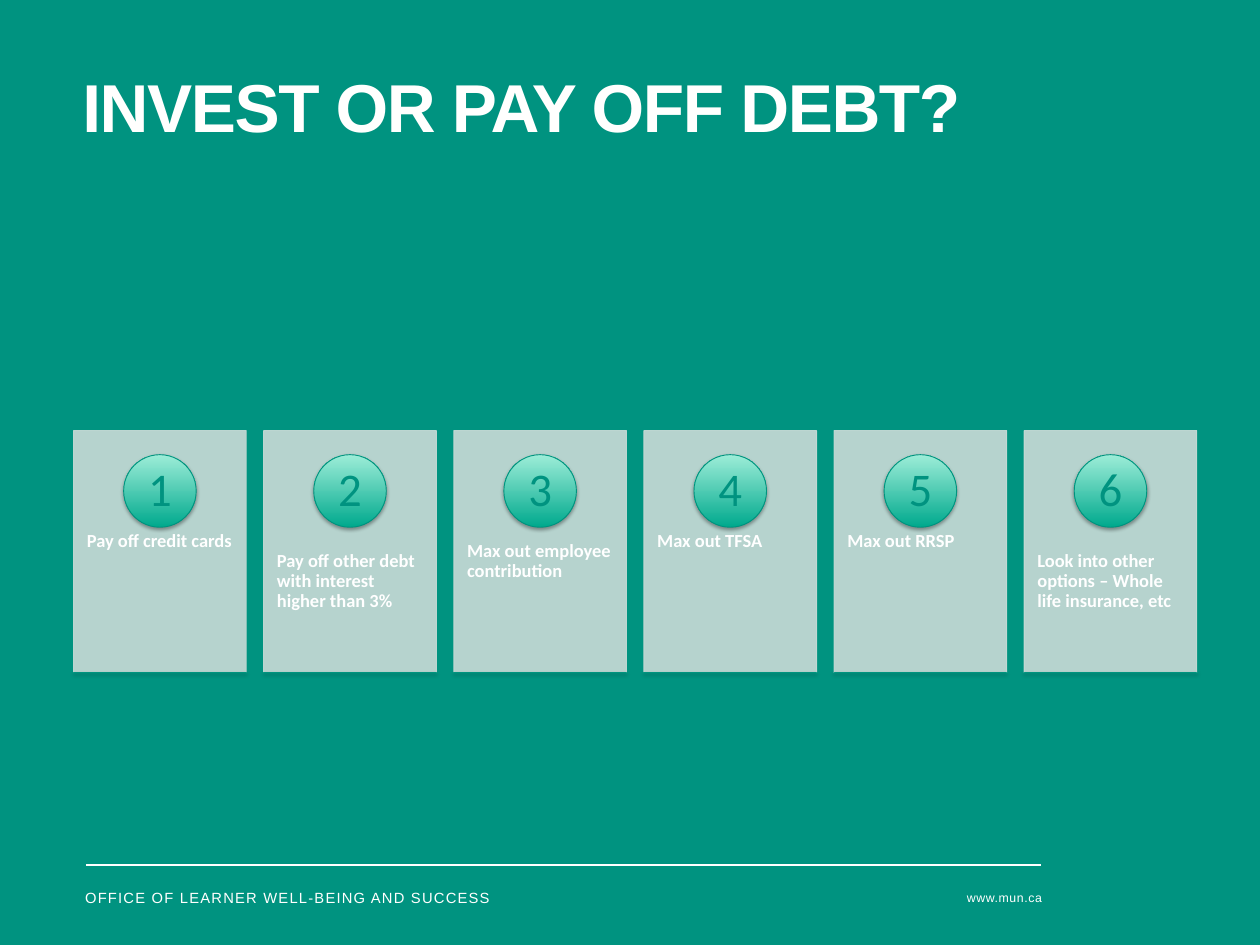
from lxml import etree
from pptx import Presentation
from pptx import util as u
from pptx.dml.color import RGBColor
from pptx.enum import shapes, text
from pptx.oxml.ns import qn

TITLE = "INVEST OR PAY OFF DEBT?"
OFFICE = "OFFICE OF LEARNER WELL-BEING AND SUCCESS"
ADDRESS = "www.mun.ca"
STEPS = [
    "Pay off credit cards",
    "Pay off other debt with interest higher than 3%",
    "Max out employee contribution",
    "Max out TFSA",
    "Max out RRSP",
    "Look into other options – Whole life insurance, etc",
]
GREEN, WHITE, CARD, EDGE = "009380", "FFFFFF", "CADBD7", "00937E"
GRADIENT = ["00A98D", "9DEDD8"]

CARD_LEFT, CARD_TOP, CARD_WIDTH, CARD_HEIGHT = 2.11, 12.34, 4.95, 6.93
CARD_PITCH = 5.45
CIRCLE_TOP, CIRCLE_SIZE, NUMBER_SIZE = 13.03, 2.08, 1.47
LABEL_TOP, LABEL_HEIGHT = 14.96, 4.17


def color(value):
    return RGBColor.from_string(value)


def lengths(*values):
    return [u.Cm(value) for value in values]


def add_text(words, place, size, font="Arial", hue=WHITE, bold=False, spacing=0,
             line=1.0, align=text.PP_ALIGN.LEFT, anchor=text.MSO_ANCHOR.TOP,
             insets=(0, 0, 0, 0)):
    box = page.shapes.add_textbox(*lengths(*place))
    frame = box.text_frame
    frame.word_wrap = True
    frame.vertical_anchor = anchor
    (frame.margin_left, frame.margin_top,
     frame.margin_right, frame.margin_bottom) = lengths(*insets)
    para = frame.paragraphs[0]
    para.alignment = align
    para.line_spacing = line
    span = para.add_run()
    span.text = words
    span.font.name = font
    span.font.size = u.Pt(size)
    span.font.bold = bold
    span.font.color.rgb = color(hue)
    if spacing:
        span.font._element.set("spc", str(round(spacing * 100)))


def add_card(place):
    card = page.shapes.add_shape(shapes.MSO_SHAPE.RECTANGLE, *lengths(*place))
    card.shadow.inherit = False
    card.fill.solid()
    card.fill.fore_color.rgb = color(CARD)
    card.line.color.rgb = color(CARD)
    card.line.width = u.Pt(0.75)
    for tint in card._element.spPr.iter(qn("a:srgbClr")):
        etree.SubElement(tint, qn("a:alpha"), val="90000")


def add_raised(kind, place):
    shape = page.shapes.add_shape(kind, *lengths(*place))
    shape.shadow.inherit = False
    shape.fill.gradient()
    shape.fill.gradient_angle = 90
    for stop, hue in zip(shape.fill.gradient_stops, GRADIENT):
        stop.color.rgb = color(hue)
    shape.line.color.rgb = color(EDGE)
    shape.line.width = u.Pt(0.75)
    effects = shape._element.spPr.find(qn("a:effectLst"))
    shadow = etree.SubElement(effects, qn("a:outerShdw"), blurRad=str(u.Pt(3.1)),
                              dist=str(u.Pt(1.8)), dir="5400000", rotWithShape="0")
    tint = etree.SubElement(shadow, qn("a:srgbClr"), val="000000")
    etree.SubElement(tint, qn("a:alpha"), val="35000")


def add_step(index, words):
    left = CARD_LEFT + index * CARD_PITCH
    circle_left = left + (CARD_WIDTH - CIRCLE_SIZE) / 2
    inner = (CIRCLE_SIZE - NUMBER_SIZE) / 2
    add_card((left, CARD_TOP, CARD_WIDTH, CARD_HEIGHT))
    add_text(words, (left, LABEL_TOP, CARD_WIDTH, LABEL_HEIGHT), 15, font="Calibri",
             bold=True, line=0.9, insets=(0.38, 0.91, 0.38, 0.91))
    add_raised(shapes.MSO_SHAPE.OVAL,
               (circle_left, CIRCLE_TOP, CIRCLE_SIZE, CIRCLE_SIZE))
    add_text(str(index + 1),
             (circle_left + inner, CIRCLE_TOP + inner, NUMBER_SIZE, NUMBER_SIZE),
             38, font="Calibri", hue=GREEN, line=0.9, align=text.PP_ALIGN.CENTER,
             anchor=text.MSO_ANCHOR.MIDDLE, insets=(0.15, 0.03, 0.15, 0.03))
    add_raised(shapes.MSO_SHAPE.RECTANGLE,
               (left, CARD_TOP + CARD_HEIGHT, CARD_WIDTH, 0))


deck = Presentation()
deck.slide_width, deck.slide_height = lengths(36.12, 27.08)
page = deck.slides.add_slide(deck.slide_layouts[6])
page.background.fill.solid()
page.background.fill.fore_color.rgb = color(GREEN)

rule = page.shapes.add_connector(shapes.MSO_CONNECTOR.STRAIGHT,
                                 *lengths(2.46, 24.79, 29.85, 24.79))
rule.line.color.rgb = color(WHITE)
rule.line.width = u.Pt(2)
etree.SubElement(rule._element.spPr, qn("a:effectLst"))

add_text(TITLE, (2.11, 2.11, 32.56, 4.57), 55, hue="FFFFFE", bold=True, spacing=-1.1,
         line=u.Pt(55), insets=(0.25, 0.13, 0.25, 0))
add_text(OFFICE, (2.44, 25.04, 21.34, 1.09), 12, hue="FFFFFE", spacing=1, line=1.5,
         anchor=text.MSO_ANCHOR.MIDDLE)
add_text(ADDRESS, (23.8, 25.07, 6.07, 1.3), 10, spacing=0.5,
         align=text.PP_ALIGN.RIGHT, anchor=text.MSO_ANCHOR.MIDDLE)
for index, words in enumerate(STEPS):
    add_step(index, words)

deck.save("out.pptx")
